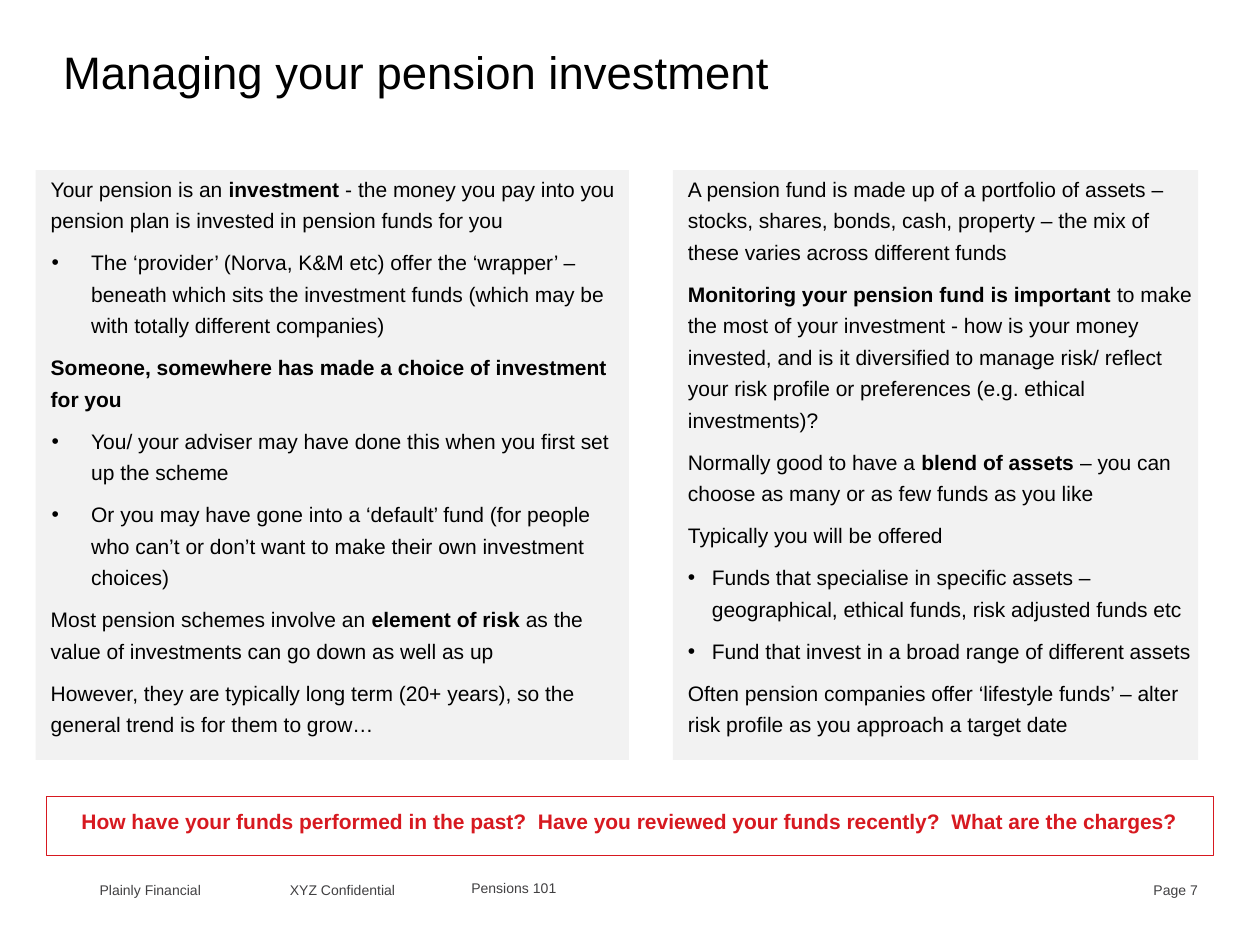
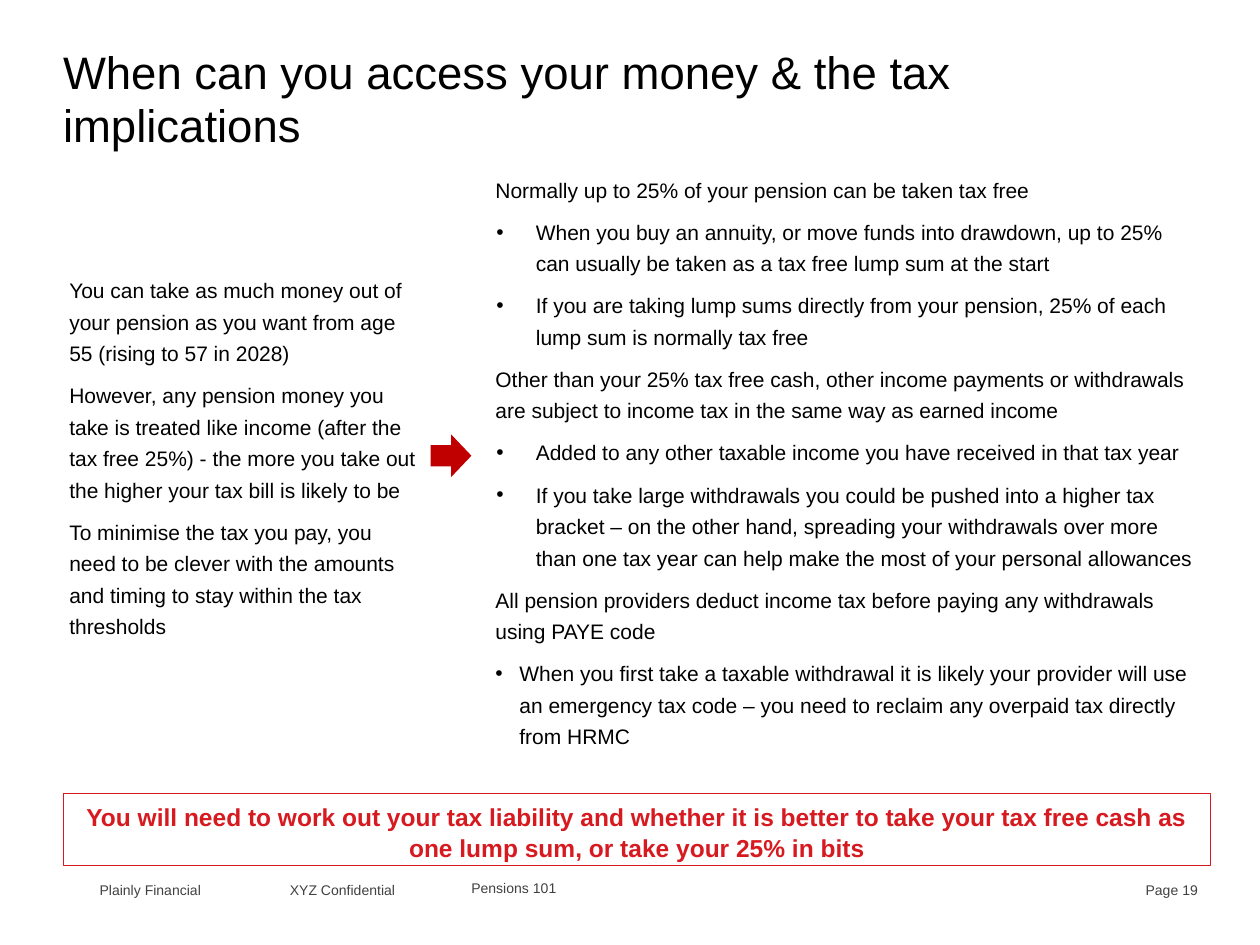
import dataclasses

import lxml.etree
import pptx
import pptx.dml.color
import pptx.enum.shapes
import pptx.enum.text
import pptx.oxml.ns
import pptx.util

Pt = pptx.util.Pt
qn = pptx.oxml.ns.qn
Align = pptx.enum.text.PP_ALIGN
Shape = pptx.enum.shapes.MSO_SHAPE

TWO_CONTENT_LAYOUT = 3
BODY_TOP = 97.2


@dataclasses.dataclass(frozen=True)
class Theme:
    font: str = "Arial"
    text: str = "000000"
    footer: str = "414042"
    panel: str = "F2F2F2"
    accent: str = "D71920"
    arrow: str = "C00000"
    title_size: float = 26
    banner_size: float = 14
    body_size: float = 12
    footer_size: float = 8
    title_leading: float = 30
    body_leading: float = 18
    space_after: float = 6


class Strong(str):
    """A run of text set in bold."""


@dataclasses.dataclass(frozen=True)
class Item:
    runs: tuple
    left: float = 8.6
    hanging: float = 0


def plain(*runs):
    return Item(runs)


def bullet(*runs):
    return Item(runs, 31.7, 22.6)


def tight_bullet(*runs):
    return Item(runs, 22.3, 13.7)


class Deck:
    def __init__(self, theme):
        self.theme = theme
        self.presentation = pptx.Presentation()
        self.presentation.slide_width = Pt(720)
        self.presentation.slide_height = Pt(540)
        self.slide = None

    def start_slide(self, title, page):
        layout = self.presentation.slide_layouts[TWO_CONTENT_LAYOUT]
        self.slide = self.presentation.slides.add_slide(layout)
        self.title(title)
        self.footer(page)

    def colour(self, value):
        return pptx.dml.color.RGBColor.from_string(value)

    def place(self, shape, box):
        shape.left, shape.top, shape.width, shape.height = map(Pt, box)

    def prepare_frame(self, frame, inset=True):
        frame.word_wrap = True
        frame.auto_size = pptx.enum.text.MSO_AUTO_SIZE.NONE
        frame.vertical_anchor = pptx.enum.text.MSO_ANCHOR.TOP
        if not inset:
            frame.margin_left = frame.margin_right = 0
            frame.margin_top = frame.margin_bottom = 0

    def add_run(self, paragraph, text, size, colour, bold=False):
        run = paragraph.add_run()
        run.text = text
        run.font.name = self.theme.font
        run.font.size = Pt(size)
        run.font.bold = bold
        run.font.color.rgb = self.colour(colour)

    def space(self, paragraph, leading):
        paragraph.line_spacing = Pt(leading)
        paragraph.space_before = Pt(0)
        paragraph.space_after = Pt(self.theme.space_after)

    def set_bullet(self, paragraph, item):
        properties = paragraph._p.get_or_add_pPr()
        properties.set("marL", str(Pt(item.left)))
        properties.set("indent", str(-Pt(item.hanging)))
        if item.hanging:
            lxml.etree.SubElement(properties, qn("a:buFont"), typeface=self.theme.font)
            lxml.etree.SubElement(properties, qn("a:buChar"), char="•")
        else:
            lxml.etree.SubElement(properties, qn("a:buNone"))

    def title(self, text):
        heading = self.slide.shapes.title
        self.place(heading, (36, 26.6, 607.7, 71.3))
        self.prepare_frame(heading.text_frame, inset=False)
        line = heading.text_frame.paragraphs[0]
        line.alignment = Align.LEFT
        self.space(line, self.theme.title_leading)
        self.add_run(line, text, self.theme.title_size, self.theme.text)

    def footer(self, page):
        entries = (
            ("Plainly Financial", (56.9, 504, 90, 11.5), Align.LEFT),
            ("XYZ Confidential", (165.6, 504, 87.8, 11.5), Align.LEFT),
            ("Pensions 101", (269.3, 502.6, 308.2, 11.5), Align.LEFT),
            (f"Page {page}", (604, 504, 80.6, 11.5), Align.RIGHT),
        )
        for text, box, alignment in entries:
            entry = self.slide.shapes.add_textbox(*map(Pt, box))
            self.prepare_frame(entry.text_frame, inset=False)
            line = entry.text_frame.paragraphs[0]
            line.alignment = alignment
            self.add_run(line, text, self.theme.footer_size, self.theme.footer)

    def column(self, index, box, items, fill=None):
        """Fill body placeholder 1 or 2 with the list items."""
        body = self.slide.placeholders[index]
        self.place(body, box)
        if fill:
            body.fill.solid()
            body.fill.fore_color.rgb = self.colour(fill)
        frame = body.text_frame
        self.prepare_frame(frame, inset=False)
        for position, item in enumerate(items):
            line = frame.add_paragraph() if position else frame.paragraphs[0]
            self.set_bullet(line, item)
            line.alignment = Align.LEFT
            self.space(line, self.theme.body_leading)
            for text in item.runs:
                self.add_run(line, text, self.theme.body_size, self.theme.text,
                             isinstance(text, Strong))

    def banner(self, text, box, size):
        frame = self.slide.shapes.add_shape(Shape.RECTANGLE, *map(Pt, box))
        frame.shadow.inherit = False
        frame.fill.background()
        frame.line.color.rgb = self.colour(self.theme.accent)
        frame.line.width = Pt(0.75)
        self.prepare_frame(frame.text_frame)
        line = frame.text_frame.paragraphs[0]
        line.alignment = Align.CENTER
        self.space(line, self.theme.body_leading)
        self.add_run(line, text, size, self.theme.accent, bold=True)

    def arrow(self, box):
        pointer = self.slide.shapes.add_shape(Shape.RIGHT_ARROW, *map(Pt, box))
        pointer.shadow.inherit = False
        pointer.fill.solid()
        pointer.fill.fore_color.rgb = self.colour(self.theme.arrow)
        pointer.line.fill.background()


def add_investment_slide(deck):
    theme = deck.theme
    deck.start_slide("Managing your pension investment", 7)
    deck.column(1, (20.4, BODY_TOP, 339, 337), (
        plain("Your pension is an ", Strong("investment"),
              " - the money you pay into you pension plan is invested in pension "
              "funds for you"),
        bullet("The ‘provider’ (Norva, K&M etc) offer the ‘wrapper’ – beneath which "
               "sits the investment funds (which may be with totally different "
               "companies)"),
        plain(Strong("Someone, somewhere has made a choice of investment for you")),
        bullet("You/ your adviser may have done this when you first set up the scheme"),
        bullet("Or you may have gone into a ‘default’ fund (for people who can’t or "
               "don’t want to make their own investment choices)"),
        plain("Most pension schemes involve an ", Strong("element of risk "),
              "as the value of investments can go down as well as up"),
        plain("However, they are typically long term (20+ years), so the general "
              "trend is for them to grow…"),
    ), theme.panel)
    deck.column(2, (384.5, BODY_TOP, 300.2, 337), (
        plain("A pension fund is made up of a portfolio of assets – stocks, shares, "
              "bonds, cash, property – the mix of these varies across different funds"),
        plain(Strong("Monitoring your pension fund is important "),
              "to make the most of your investment - how is your money invested, and "
              "is it diversified to manage risk/ reflect your risk profile or "
              "preferences (e.g. ethical investments)?"),
        plain("Normally good to have a ", Strong("blend of assets "),
              "– you can choose as many or as few funds as you like"),
        plain("Typically you will be offered"),
        tight_bullet("Funds that specialise in specific assets – geographical, "
                     "ethical funds, risk adjusted funds etc"),
        tight_bullet("Fund that invest in a broad range of different assets"),
        plain("Often pension companies offer ‘lifestyle funds’ – alter risk profile "
              "as you approach a target date"),
    ), theme.panel)
    deck.banner("How have your funds performed in the past?  Have you reviewed your "
                "funds recently?  What are the charges?",
                (26.6, 455, 666.7, 33.8), theme.body_size)


def add_access_slide(deck):
    deck.start_slide("When can you access your money & the tax implications", 19)
    deck.column(1, (31, 155.2, 210.2, 211), (
        plain("You can take as much money out of your pension as you want from age 55 "
              "(rising to 57 in 2028)"),
        plain("However, any pension money you take is treated like income (after the "
              "tax free 25%) - the more you take out the higher your tax bill is "
              "likely to be"),
        plain("To minimise the tax you pay, you need to be clever with the amounts and "
              "timing to stay within the tax thresholds"),
    ))
    deck.column(2, (274.5, BODY_TOP + 0.6, 409.7, 337), (
        plain("Normally up to 25% of your pension can be taken tax free"),
        bullet("When you buy an annuity, or move funds into drawdown, up to 25% can "
               "usually be taken as a tax free lump sum at the start"),
        bullet("If you are taking lump sums directly from your pension, 25% of each "
               "lump sum is normally tax free"),
        plain("Other than your 25% tax free cash, other income payments or withdrawals "
              "are subject to income tax in the same way as earned income"),
        bullet("Added to any other taxable income you have received in that tax year"),
        bullet("If you take large withdrawals you could be pushed into a higher tax "
               "bracket – on the other hand, spreading your withdrawals over more than "
               "one tax year can help make the most of your personal allowances"),
        plain("All pension providers deduct income tax before paying any withdrawals "
              "using PAYE code"),
        tight_bullet("When you first take a taxable withdrawal it is likely your "
                     "provider will use an emergency tax code – you need to reclaim "
                     "any overpaid tax directly from HRMC"),
    ))
    deck.banner("You will need to work out your tax liability and whether it is better "
                "to take your tax free cash as one lump sum, or take your 25% in bits",
                (36.2, 453.5, 655.7, 41), deck.theme.banner_size)
    deck.arrow((246.1, 248.2, 23.3, 24.5))


def main():
    deck = Deck(Theme())
    add_investment_slide(deck)
    add_access_slide(deck)
    deck.presentation.save("out.pptx")


if __name__ == "__main__":
    main()
